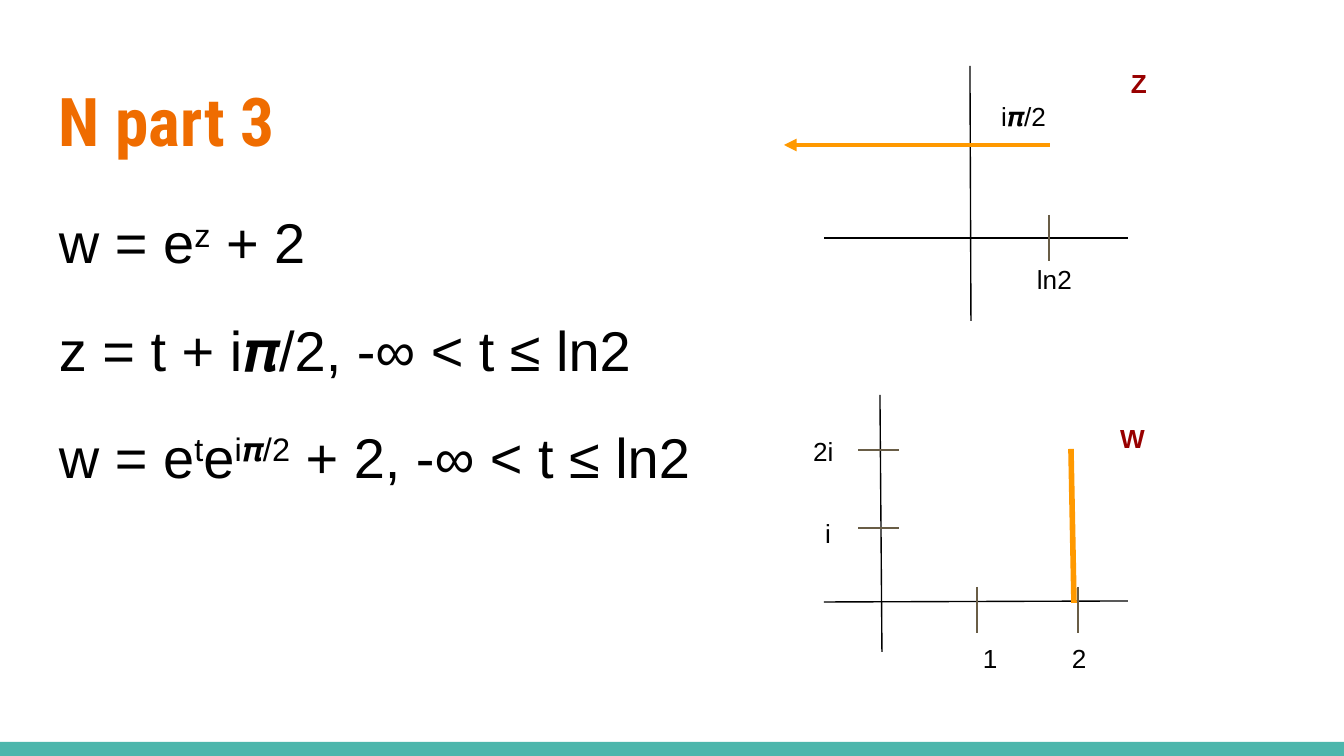
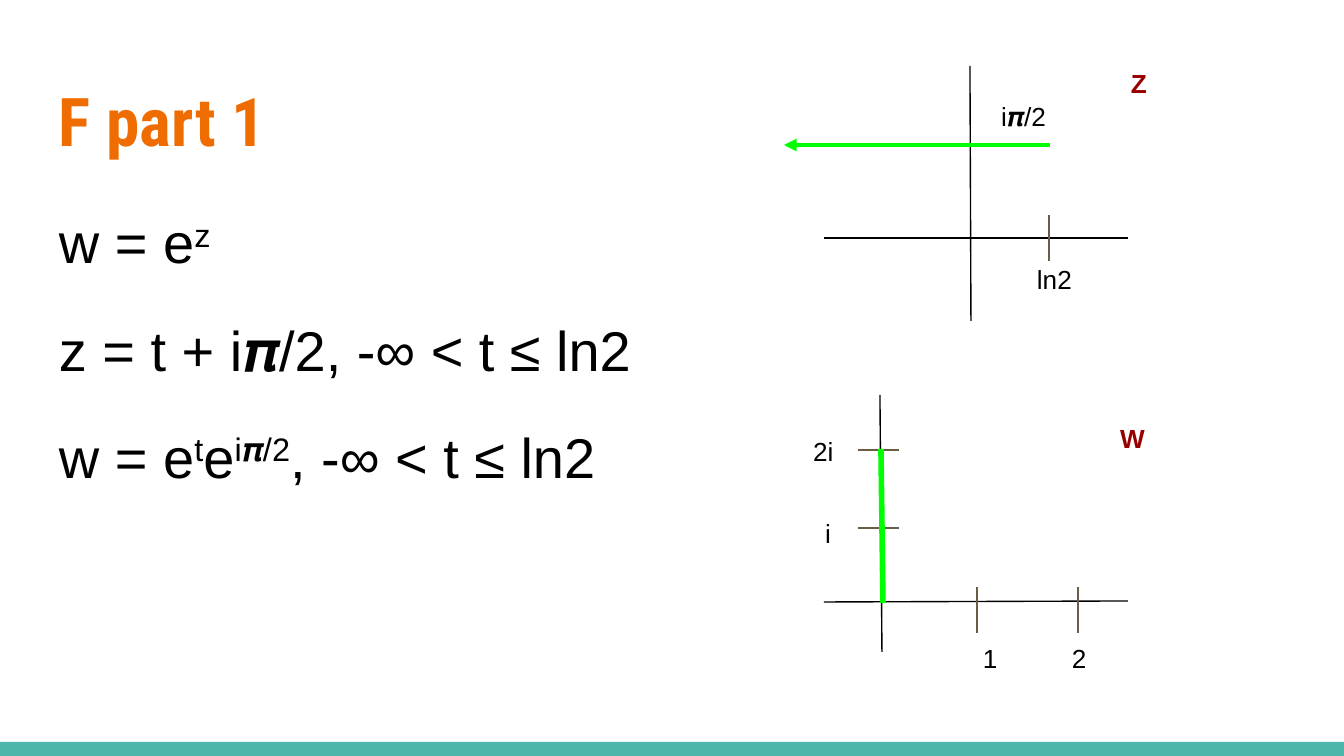
from pptx import Presentation
from pptx.dml.color import RGBColor
from pptx.enum.shapes import MSO_CONNECTOR, MSO_SHAPE
from pptx.enum.text import MSO_ANCHOR, MSO_AUTO_SIZE, PP_ALIGN
from pptx.oxml.ns import qn
from pptx.util import Pt
from lxml.etree import SubElement

PX = 914400 / 134.4
WIDTH, HEIGHT, BAND, INSET = 1344, 756, 14, 13

# Theme: colours, type styles and line widths
THEME = {
    "band": "4DB6AC", "axis": "000000", "tick": "695D46",
    "orange": "FF9900", "green": "00FF00",
    "thin": 0.75, "arrow": 2.25, "segment": 3,
    "title": ("EF6C00", {"name": "Roboto Condensed", "size": Pt(36), "bold": True}),
    "body": ("000000", {"name": "Arial", "size": Pt(30), "bold": False}),
    "label": ("000000", {"name": "Arial", "size": Pt(14), "bold": False}),
    "plane": ("980000", {"name": "Arial", "size": Pt(14), "bold": True}),
}
FRAME = {"word_wrap": True, "vertical_anchor": MSO_ANCHOR.TOP,
         "auto_size": MSO_AUTO_SIZE.NONE}
FRAME.update({f"margin_{side}": round(INSET * PX)
              for side in ("left", "top", "right", "bottom")})


def write(sp, box, lines, style, spacing=1.0, after=0):
    """Place a shape and fill it; text between ^ marks is superscript."""
    for name, value in zip(("left", "top", "width", "height"), box):
        setattr(sp, name, round(value * PX))
    tf = sp.text_frame
    for name, value in FRAME.items():
        setattr(tf, name, value)
    color, font = THEME[style]
    for i, line in enumerate(lines):
        p = tf.paragraphs[0] if i == 0 else tf.add_paragraph()
        p.alignment, p.line_spacing, p.space_after = PP_ALIGN.LEFT, spacing, Pt(after)
        for j, part in enumerate(line.split("^")):
            if not part:
                continue
            r = p.add_run()
            r.text = part
            for name, value in font.items():
                setattr(r.font, name, value)
            r.font.color.rgb = RGBColor.from_string(color)
            if j % 2:
                r._r.get_or_add_rPr().set("baseline", "30000")
    return tf


def draw_line(s, ends, color, width, arrow=False):
    sp = s.shapes.add_connector(MSO_CONNECTOR.STRAIGHT, *(round(v * PX) for v in ends))
    sp.line.color.rgb = RGBColor.from_string(THEME[color])
    sp.line.width = Pt(THEME[width])
    if arrow:
        SubElement(sp.line._get_or_add_ln(), qn("a:tailEnd"), type="triangle")
    SubElement(sp.element.spPr, qn("a:effectLst"))


# Content of the two slides
SLIDES = [
    {"title": "N part 3", "curve": "orange", "segment": (1071, 449, 1074, 603),
     "body": ["w = e^z^ + 2", "z = t + i𝝅/2, -∞ < t ≤ ln2",
              "w = e^t^e^i𝝅/2^ + 2, -∞ < t ≤ ln2"]},
    {"title": "F part 1", "curve": "green", "segment": (881, 449, 883, 603),
     "body": ["w = e^z^", "z = t + i𝝅/2, -∞ < t ≤ ln2",
              "w = e^t^e^i𝝅/2^, -∞ < t ≤ ln2"]},
]

# Parts shared by both planes
AXES = [(970, 66, 971, 321), (1128, 238, 824, 238),
        (880, 395, 882, 652), (1128, 601, 824, 602)]
TICKS = [(x, y, x, y + 46) for x, y in ((977, 587), (1078, 587), (1049, 215))]
TICKS += [(899, y, 858, y) for y in (528, 450)]
LABELS = [
    ("ln2", "label", (1024, 250, 91, 85)),
    ("1", "label", (970, 629, 62, 51)),
    ("2", "label", (1059, 629, 62, 46)),
    ("i𝝅/2", "label", (988, 87, 112, 46)),
    ("2i", "label", (800, 422, 50, 51)),
    ("i", "label", (812, 504, 35, 31)),
    ("Z", "plane", (1118, 54, 62, 51)),
    ("W", "plane", (1107, 409, 74, 51)),
]

prs = Presentation()
prs.slide_width, prs.slide_height = round(WIDTH * PX), round(HEIGHT * PX)
layout = prs.slide_layouts[5]

for number, content in enumerate(SLIDES):
    s = prs.slides.add_slide(layout)

    # Bottom band, kept on the master
    if number == 0:
        band = s.shapes.add_shape(
            MSO_SHAPE.RECTANGLE,
            *(round(v * PX) for v in (0, HEIGHT - BAND, WIDTH, BAND)))
        band.shadow.inherit = False
        band.fill.solid()
        band.fill.fore_color.rgb = RGBColor.from_string(THEME["band"])
        band.line.fill.background()
        prs.slide_master.shapes.element.append(band.element)

    # Title and equations
    write(s.shapes.title, (46, 66, 1253, 103), [content["title"]], "title")
    tf = write(s.shapes.add_textbox(0, 0, 0, 0), (46, 185, 1253, 485),
               content["body"], "body", spacing=1.15, after=16)
    tf.auto_size = MSO_AUTO_SIZE.TEXT_TO_FIT_SHAPE

    # Axes and ticks
    for ends in AXES:
        draw_line(s, ends, "axis", "thin")
    for ends in TICKS:
        draw_line(s, ends, "tick", "thin")

    # Curve in the z plane and its image in the w plane
    draw_line(s, (1050, 145, 784, 145), content["curve"], "arrow", arrow=True)
    draw_line(s, content["segment"], content["curve"], "segment")

    # Labels
    for text, style, box in LABELS:
        write(s.shapes.add_textbox(0, 0, 0, 0), box, [text], style)

prs.save("out.pptx")
